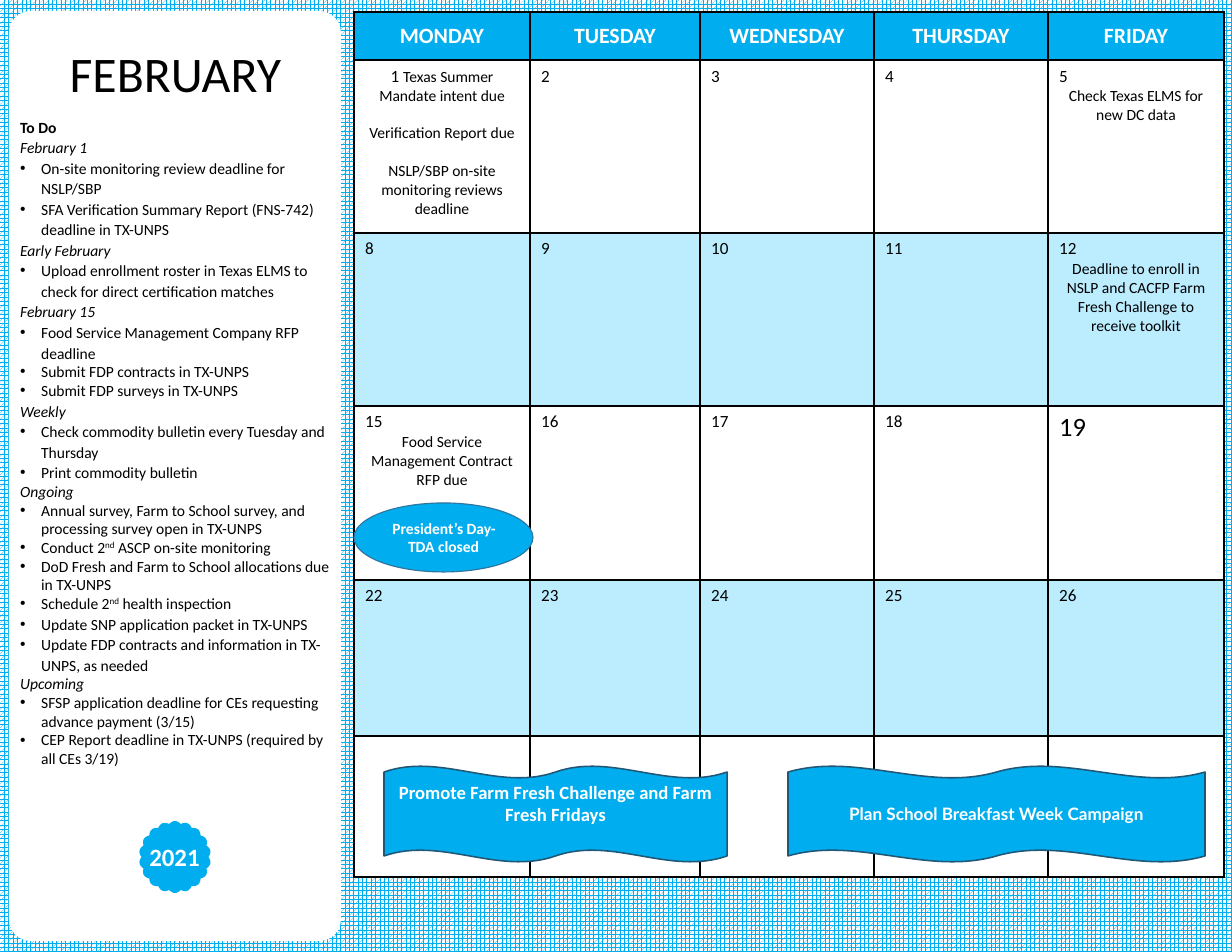
import math
from lxml import etree
from pptx import Presentation
from pptx import util as u
from pptx.dml.color import RGBColor
from pptx.enum import dml, shapes, text
from pptx.oxml.ns import qn

PX = 914400 / 112
BLUE = RGBColor(0x00, 0xAE, 0xEF)
PALE = RGBColor(0xBB, 0xED, 0xFF)
WHITE = RGBColor(0xFF, 0xFF, 0xFF)
BLACK = RGBColor(0, 0, 0)
STEEL = RGBColor(0x2D, 0x76, 0x9F)
NAVY = RGBColor(0x21, 0x57, 0x76)

DAYS = ["MONDAY", "TUESDAY", "WEDNESDAY", "THURSDAY", "FRIDAY"]
COLS = [176, 170, 174, 174, 176]
ROWS = [48, 173, 173, 174, 156, 141]
FIRST = 1  # date of the first Monday
WEEKS = 4
EVENTS = {
    5: "Check Texas ELMS for new DC data",
    12: "Deadline to enroll in NSLP and CACFP Farm Fresh Challenge to receive toolkit",
    15: "Food Service Management Contract RFP due",
}
DUE = ["Texas Summer Mandate intent due", "Verification Report due",
       "NSLP/SBP on-site monitoring reviews deadline"]

# kind, line spacing, text; ^ encloses superscript
TODO = [
    ("top", 1.1, "To Do"),
    ("head", 1.1, "February 1"),
    ("item", 1.1, "On-site monitoring review deadline for NSLP/SBP"),
    ("item", 1.1, "SFA Verification Summary Report (FNS-742) deadline in TX-UNPS"),
    ("head", 1.1, "Early February"),
    ("item", 1.1, "Upload enrollment roster in Texas ELMS to check for direct certification matches"),
    ("head", 1.1, "February 15"),
    ("item", 1.1, "Food Service Management Company RFP deadline"),
    ("item", 1.0, "Submit FDP contracts in TX-UNPS"),
    ("item", 1.0, "Submit FDP surveys in TX-UNPS"),
    ("head", 1.1, "Weekly"),
    ("item", 1.1, "Check commodity bulletin every Tuesday and Thursday"),
    ("item", 1.1, "Print commodity bulletin"),
    ("head", 1.0, "Ongoing"),
    ("item", 1.0, "Annual survey, Farm to School survey, and processing survey open in TX-UNPS"),
    ("item", 1.0, "Conduct 2^nd^ ASCP on-site monitoring"),
    ("item", 1.0, "DoD Fresh and Farm to School allocations due in TX-UNPS"),
    ("item", 1.0, "Schedule 2^nd^ health inspection"),
    ("item", 1.1, "Update SNP application packet in TX-UNPS"),
    ("item", 1.1, "Update FDP contracts and information in TX-UNPS, as needed"),
    ("head", 1.0, "Upcoming"),
    ("item", 1.0, "SFSP application deadline for CEs requesting advance payment (3/15)"),
    ("item", 1.0, "CEP Report deadline in TX-UNPS (required by all CEs 3/19)"),
]

# preset, box, text, font, size, line colour, line width, bottom inset
NOTES = [
    (shapes.MSO_SHAPE.OVAL, (354, 503, 179, 69), "President’s Day-TDA closed",
     "Calibri", 10, STEEL, 0.75, 6),
    (shapes.MSO_SHAPE.DOUBLE_WAVE, (788, 766, 417, 96),
     "Plan School Breakfast Week Campaign", "Lato", 11, NAVY, 1, 6),
    (shapes.MSO_SHAPE.DOUBLE_WAVE, (384, 766, 343, 96),
     "Promote Farm Fresh Challenge and Farm Fresh Fridays", "Calibri", 12, NAVY, 1, 27),
]


def px(n):
    return u.Emu(round(n * PX))


def place(shape, box):
    shape.left, shape.top, shape.width, shape.height = map(px, box)


def style(run, size, color=BLACK, bold=False, italic=False, face="Calibri"):
    font = run.font
    font.name, font.size, font.bold, font.italic = face, u.Pt(size), bold, italic
    font.color.rgb = color


def write(para, words, size, color=BLACK, bold=False, face="Calibri", center=True):
    para.text = words
    para.alignment = text.PP_ALIGN.CENTER if center else text.PP_ALIGN.LEFT
    style(para.runs[0], size, color, bold, face=face)


def paint(shape, fill, line=None, width=1):
    shape.shadow.inherit = False
    shape.fill.solid()
    shape.fill.fore_color.rgb = fill
    if line is None:
        shape.line.fill.background()
    else:
        shape.line.color.rgb = line
        shape.line.width = u.Pt(width)


def border(cell):
    props = cell._tc.get_or_add_tcPr()
    for side in ("a:lnL", "a:lnR", "a:lnT", "a:lnB"):
        line = etree.SubElement(props, qn(side), w=str(u.Pt(1)))
        fill = etree.SubElement(line, qn("a:solidFill"))
        etree.SubElement(fill, qn("a:srgbClr"), val=str(BLACK))


deck = Presentation()
deck.slide_width, deck.slide_height = px(1232), px(952)
slide = deck.slides.add_slide(deck.slide_layouts[1])
tree = slide.shapes

# Patterned background
back = slide.background.fill
back.patterned()
back.pattern = dml.MSO_PATTERN.SPHERE
back.fore_color.rgb, back.back_color.rgb = BLUE, WHITE

# Side panel, behind the placeholders
panel = tree.add_shape(shapes.MSO_SHAPE.ROUNDED_RECTANGLE, *map(px, (9, 11, 332, 930)))
panel.adjustments[0] = 0.065
paint(panel, WHITE)
tree._spTree.insert(2, panel._element)

# Month title
title = tree.title
place(title, (12, 38, 327, 70))
title.text_frame.auto_size = text.MSO_AUTO_SIZE.NONE
write(title.text_frame.paragraphs[0], "FEBRUARY", 32)

# To-do list
body = slide.placeholders[1]
place(body, (9, 110, 334, 715))
frame = body.text_frame
frame.auto_size = text.MSO_AUTO_SIZE.NONE
frame.text = "\n".join(words for _, _, words in TODO)
for para, (kind, gap, words) in zip(frame.paragraphs, TODO):
    para.text = ""
    para.line_spacing, para.space_before = gap, u.Pt(0)
    props = para._p.get_or_add_pPr()
    dent = px(21) if kind == "item" else 0
    props.set("marL", str(dent))
    props.set("indent", str(-dent))
    if kind != "item":
        etree.SubElement(props, qn("a:buNone"))
    for i, part in enumerate(words.split("^")):
        run = para.add_run()
        run.text = part
        style(run, 10, bold=kind == "top", italic=kind == "head")
        if i % 2:
            run.font._element.set("baseline", "30000")

# Calendar grid
grid = tree.add_table(len(ROWS), len(COLS),
                      *map(px, (354, 12, sum(COLS), sum(ROWS)))).table
grid.first_row = grid.horz_banding = False
for col, width in zip(grid.columns, COLS):
    col.width = px(width)
for row, height in zip(grid.rows, ROWS):
    row.height = px(height)
for r in range(len(ROWS)):
    for c, name in enumerate(DAYS):
        cell = grid.cell(r, c)
        border(cell)
        cell.fill.solid()
        shade = PALE if r in (2, 4) else WHITE
        cell.fill.fore_color.rgb = shade if r else BLUE
        para = cell.text_frame.paragraphs[0]
        day = FIRST + 7 * (r - 1) + c
        if r == 0:
            cell.vertical_anchor = text.MSO_ANCHOR.MIDDLE
            write(para, name, 14, WHITE, True)
        elif day == FIRST:
            write(para, f"{day} ", 11)
            run = para.add_run()
            run.text = DUE[0]
            style(run, 10)
            for words in DUE[1:]:
                para = cell.text_frame.add_paragraph()
                write(para, words, 10)
                para.space_before = u.Pt(12)
        elif r <= WEEKS:
            write(para, str(day), 17 if day == 19 else 11, center=False)
            if day in EVENTS:
                write(cell.text_frame.add_paragraph(), EVENTS[day], 10)

# Scalloped year badge
LOBES, STEPS = 18, 8
MID = (175, 857)
points = []
for i in range(LOBES * STEPS):
    turn = 2 * math.pi * i / (LOBES * STEPS)
    reach = 33.5 + 2.5 * abs(math.cos(LOBES * turn / 2))
    points.append((px(MID[0] + reach * math.sin(turn)), px(MID[1] - reach * math.cos(turn))))
pen = tree.build_freeform(*points[0])
pen.add_line_segments(points[1:])
paint(pen.convert_to_shape(), BLUE)
year = tree.add_textbox(*map(px, (132, 836, 85, 41)))
year.text_frame.word_wrap = True
write(year.text_frame.paragraphs[0], "2021", 16, WHITE, True)

# Holiday and campaign notes
for kind, box, words, face, size, line, width, inset in NOTES:
    note = tree.add_shape(kind, *map(px, box))
    paint(note, BLUE, line, width)
    frame = note.text_frame
    frame.word_wrap = True
    frame.vertical_anchor = text.MSO_ANCHOR.MIDDLE
    frame.margin_bottom = px(inset)
    write(frame.paragraphs[0], words, size, WHITE, True, face)

deck.save("out.pptx")
